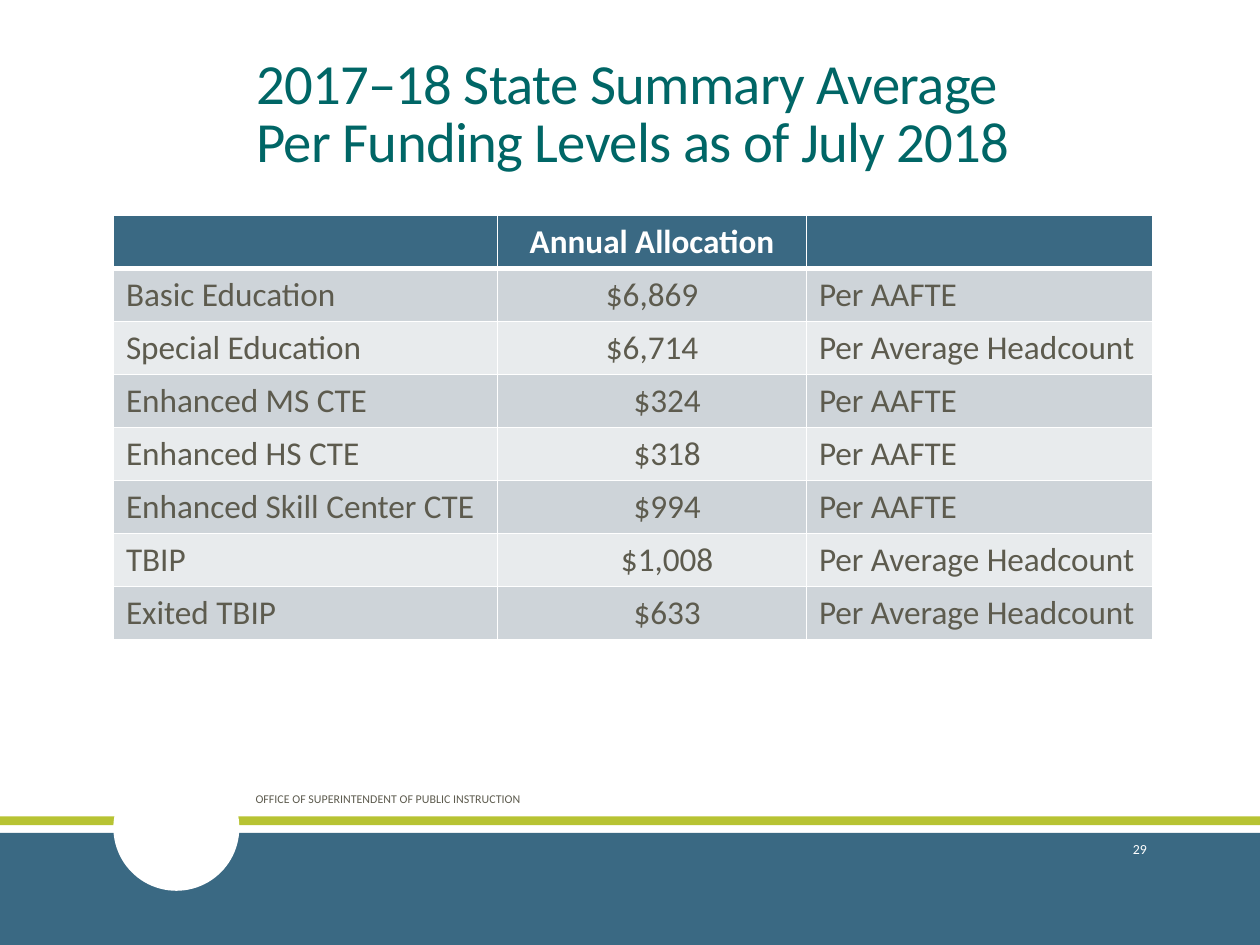
from lxml import etree
from pptx import Presentation
from pptx import util as u
from pptx.dml.color import RGBColor
from pptx.enum import shapes, text
from pptx.oxml.ns import qn

PX = 9144  # 100 px to the inch
THEME = {
    "font": "Calibri",
    "title": "006666", "ink": "5D5B4E", "paper": "FFFFFF",
    "lime": "B7C333", "blue": "3A6983",
    "bands": ("CED4D9", "E8EBED"),
    "title_size": 32.4, "table_size": 19, "footer_size": 6.8, "number_size": 7.9,
}
LEFT, CENTER, RIGHT = text.PP_ALIGN.LEFT, text.PP_ALIGN.CENTER, text.PP_ALIGN.RIGHT


def write(frame, words, size, color, align=LEFT, bold=False):
    paragraph = frame.paragraphs[0]
    paragraph.text = words
    paragraph.alignment = align
    style = {"name": THEME["font"], "size": u.Pt(size), "bold": bold}
    for run in paragraph.runs:
        for attribute, value in style.items():
            setattr(run.font, attribute, value)
        run.font.color.rgb = RGBColor.from_string(color)
    return paragraph


def border(cell, widths):
    """Draw white edges; widths maps L, R, T, B (in that order) to points."""
    properties = cell._tc.get_or_add_tcPr()
    for side, width in widths.items():
        line = etree.SubElement(properties, qn(f"a:ln{side}"), w=str(u.Pt(width)))
        solid = etree.SubElement(line, qn("a:solidFill"))
        etree.SubElement(solid, qn("a:srgbClr"), val=THEME["paper"])


deck = Presentation()
deck.slide_width, deck.slide_height = 1000 * PX, 750 * PX
slide = deck.slides.add_slide(deck.slide_layouts[5])

# Footer band with the round seal space
band_parts = [
    (shapes.MSO_SHAPE.RECTANGLE, (0, 648, 1000, 7), "lime"),
    (shapes.MSO_SHAPE.RECTANGLE, (0, 661, 1000, 89), "blue"),
    (shapes.MSO_SHAPE.OVAL, (90, 607, 100, 100), "paper"),
]
for preset, place, color in band_parts:
    part = slide.shapes.add_shape(preset, *(n * PX for n in place))
    part.shadow.inherit = False
    part.fill.solid()
    part.fill.fore_color.rgb = RGBColor.from_string(THEME[color])
    part.line.fill.background()

# Title
title = slide.shapes.title
title_place = {"left": 90, "top": 54, "width": 825, "height": 89}
for attribute, value in title_place.items():
    setattr(title, attribute, value * PX)
title_format = {"vertical_anchor": text.MSO_ANCHOR.BOTTOM, "word_wrap": True,
                "auto_size": text.MSO_AUTO_SIZE.NONE}
for attribute, value in title_format.items():
    setattr(title.text_frame, attribute, value)
heading = write(title.text_frame,
                "2017–18 State Summary Average \vPer Funding Levels as of July 2018",
                THEME["title_size"], THEME["title"], CENTER)
heading.line_spacing = 0.85
for run in heading.runs:
    run.font._element.set("spc", "-40")

# Allocation table: the third value is the extra left indent of the amount
allocations = [
    ("", "Annual Allocation", 0, ""),
    ("Basic Education", "$6,869", 0, "Per AAFTE"),
    ("Special Education", "$6,714", 0, "Per Average Headcount"),
    ("Enhanced MS CTE", "$324", 24, "Per AAFTE"),
    ("Enhanced HS CTE", "$318", 24, "Per AAFTE"),
    ("Enhanced Skill Center CTE", "$994", 24, "Per AAFTE"),
    ("TBIP", "$1,008", 24, "Per Average Headcount"),
    ("Exited TBIP", "$633", 24, "Per Average Headcount"),
]
table = slide.shapes.add_table(len(allocations), 3, 90 * PX, 171 * PX,
                               825 * PX, 333 * PX).table
for column, width in zip(table.columns, (305, 245, 275)):
    column.width = width * PX

for row, (program, amount, indent, basis) in enumerate(allocations):
    header = row == 0
    fill = THEME["blue"] if header else THEME["bands"][(row - 1) % 2]
    for column, words in enumerate((program, amount, basis)):
        cell = table.cell(row, column)
        border(cell, {"L": 1, "R": 1, "T": 3 if row == 1 else 1, "B": 3 if header else 1})
        cell.fill.solid()
        cell.fill.fore_color.rgb = RGBColor.from_string(fill)
        if not header:
            cell.vertical_anchor = text.MSO_ANCHOR.MIDDLE
        if column == 1:
            cell.margin_left = (10 + indent) * PX
        if words:
            write(cell.text_frame, words, THEME["table_size"],
                  THEME["paper" if header else "ink"],
                  CENTER if column == 1 else LEFT, header)

# Office name and page number
footers = [
    ("OFFICE OF SUPERINTENDENT OF PUBLIC INSTRUCTION", (193, 614, 396, 40),
     "footer_size", "ink", LEFT),
    ("29", (812, 654, 108, 40), "number_size", "paper", RIGHT),
]
for words, place, size, color, align in footers:
    frame = slide.shapes.add_textbox(*(n * PX for n in place)).text_frame
    frame.word_wrap = True
    frame.vertical_anchor = text.MSO_ANCHOR.MIDDLE
    write(frame, words, THEME[size], THEME[color], align)

deck.save("out.pptx")
